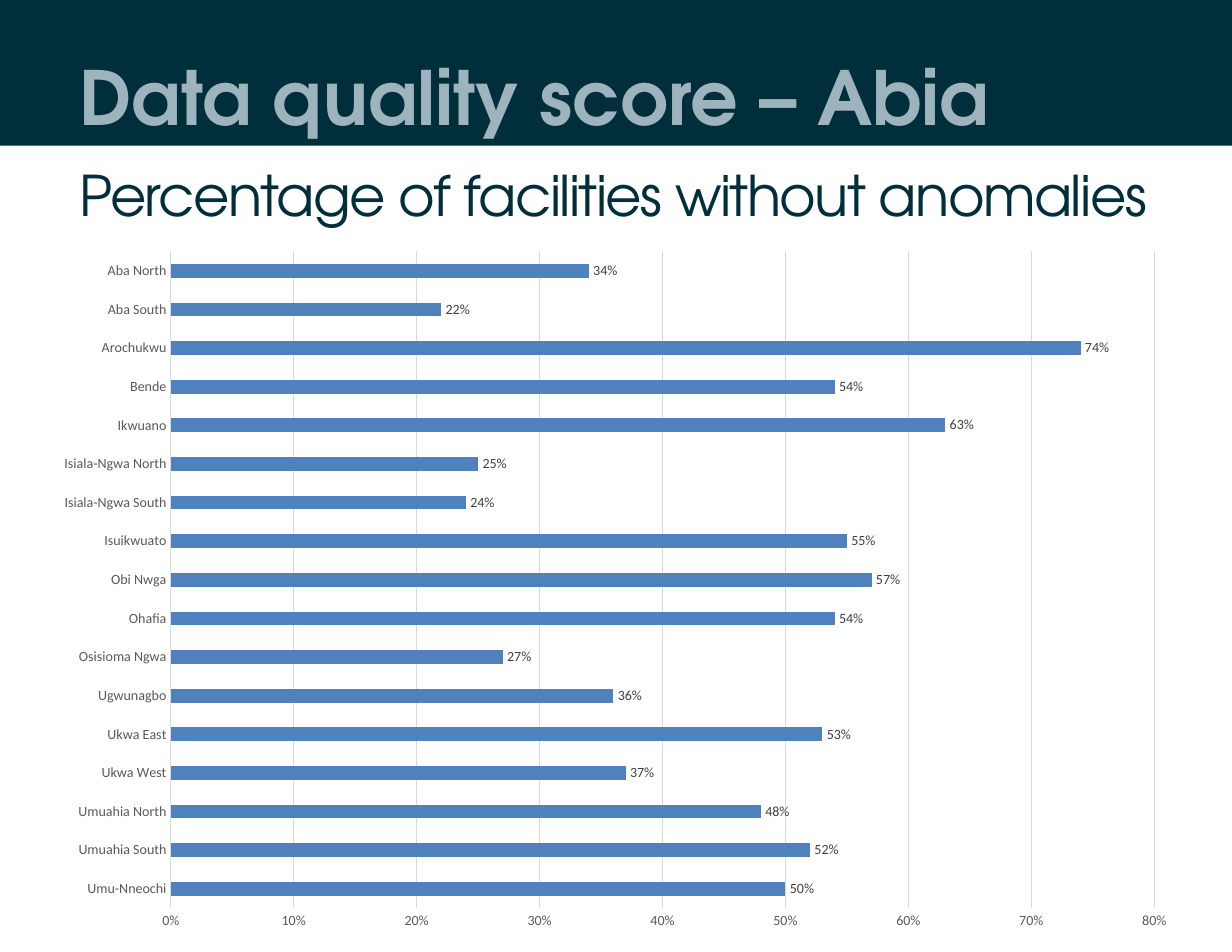
"""Build the Abia data quality slide."""
from pptx import Presentation
from pptx.chart.data import CategoryChartData
from pptx.dml.color import RGBColor
from pptx.enum.chart import XL_CHART_TYPE, XL_LABEL_POSITION, XL_TICK_MARK
from pptx.enum.shapes import MSO_SHAPE
from pptx.enum.text import MSO_ANCHOR, MSO_AUTO_SIZE, PP_ALIGN
from pptx.util import Inches, Pt

BAR = XL_CHART_TYPE.BAR_CLUSTERED
OUT = XL_LABEL_POSITION.OUTSIDE_END
NO_TICK = XL_TICK_MARK.NONE
RECT = MSO_SHAPE.RECTANGLE
TOP = MSO_ANCHOR.TOP
NO_FIT = MSO_AUTO_SIZE.NONE
LEFT = PP_ALIGN.LEFT

NAVY = RGBColor(0x00, 0x2E, 0x3A)
MIST = RGBColor(0x9D, 0xB4, 0xBE)
BLUE = RGBColor(0x4F, 0x81, 0xBD)
BLACK = RGBColor(0x00, 0x00, 0x00)
DARK = RGBColor(0x40, 0x40, 0x40)
GREY = RGBColor(0x59, 0x59, 0x59)
PALE = RGBColor(0xD9, 0xD9, 0xD9)

HEAD = "TeX Gyre Adventor"
BODY = "Calibri"

SCORES = {
    "Umu-Nneochi": 0.5,
    "Umuahia South": 0.52,
    "Umuahia North": 0.48,
    "Ukwa West": 0.37,
    "Ukwa East": 0.53,
    "Ugwunagbo": 0.36,
    "Osisioma Ngwa": 0.27,
    "Ohafia": 0.54,
    "Obi Nwga": 0.57,
    "Isuikwuato": 0.55,
    "Isiala-Ngwa South": 0.24,
    "Isiala-Ngwa North": 0.25,
    "Ikwuano": 0.63,
    "Bende": 0.54,
    "Arochukwu": 0.74,
    "Aba South": 0.22,
    "Aba North": 0.34,
}


def style(font, name, size, color, bold=False):
    """Set the face, size, colour and weight of a font."""
    font.name = name
    font.size = Pt(size)
    font.color.rgb = color
    font.bold = bold


def rule(line):
    """Make a line thin and pale."""
    line.color.rgb = PALE
    line.width = Pt(0.75)


def add_band(slide):
    """Add the dark band behind the title."""
    band = slide.shapes.add_shape(RECT, 0, 0, Inches(11), Inches(1.3))
    band.shadow.inherit = False
    band.fill.solid()
    band.fill.fore_color.rgb = NAVY
    band.line.fill.background()
    slide.shapes.title.element.addprevious(band.element)


def write(shape, text, size, color, bold=False):
    """Write one left-aligned line and return its run."""
    frame = shape.text_frame
    frame.word_wrap = True
    frame.auto_size = NO_FIT
    frame.vertical_anchor = TOP
    line = frame.paragraphs[0]
    line.alignment = LEFT
    run = line.add_run()
    run.text = text
    style(run.font, HEAD, size, color, bold)
    return run


def add_title(slide):
    """Place and fill the title."""
    title = slide.shapes.title
    title.left, title.top = Inches(0.61), Inches(0.4)
    title.width, title.height = Inches(9.54), Inches(1.25)
    write(title, "Data quality score – Abia", 48, MIST, True)


def add_lead(slide):
    """Add the tightly spaced line below the band."""
    box = slide.shapes.add_textbox(
        Inches(0.61), Inches(1.38), Inches(10.33), Inches(0.75))
    run = write(box, "Percentage of facilities without anomalies", 36, NAVY)
    run.font._element.set("spc", "-100")


def set_axis(axis):
    """Give an axis small grey labels and no ticks."""
    axis.major_tick_mark = NO_TICK
    axis.minor_tick_mark = NO_TICK
    style(axis.tick_labels.font, BODY, 9, GREY)


def add_chart(slide):
    """Add the bar chart of scores."""
    data = CategoryChartData(number_format="0%")
    data.categories = list(SCORES)
    data.add_series("Series 1", list(SCORES.values()))
    chart = slide.shapes.add_chart(
        BAR, Inches(0.37), Inches(2.12), Inches(10.25), Inches(6.3), data).chart
    style(chart.font, BODY, 10, BLACK)
    chart.has_legend = False
    chart.has_title = False

    names, scale = chart.category_axis, chart.value_axis
    set_axis(names)
    rule(names.format.line)
    set_axis(scale)
    scale.format.line.fill.background()
    scale.minimum_scale, scale.maximum_scale = 0, 0.8
    scale.major_unit = 0.1
    scale.has_major_gridlines = True
    rule(scale.major_gridlines.format.line)
    scale.tick_labels.number_format = "0%"
    scale.tick_labels.number_format_is_linked = False

    plot = chart.plots[0]
    plot.gap_width = 182
    plot.vary_by_categories = False
    fill = plot.series[0].format.fill
    fill.solid()
    fill.fore_color.rgb = BLUE
    plot.has_data_labels = True
    labels = plot.data_labels
    labels.show_value = True
    labels.position = OUT
    labels.number_format = "0%"
    labels.number_format_is_linked = False
    style(labels.font, BODY, 9, DARK)


def main():
    """Build and save the slide."""
    deck = Presentation()
    deck.slide_width, deck.slide_height = Inches(11), Inches(8.5)
    slide = deck.slides.add_slide(deck.slide_layouts[5])
    add_band(slide)
    add_title(slide)
    add_lead(slide)
    add_chart(slide)
    deck.save("out.pptx")


if __name__ == "__main__":
    main()
